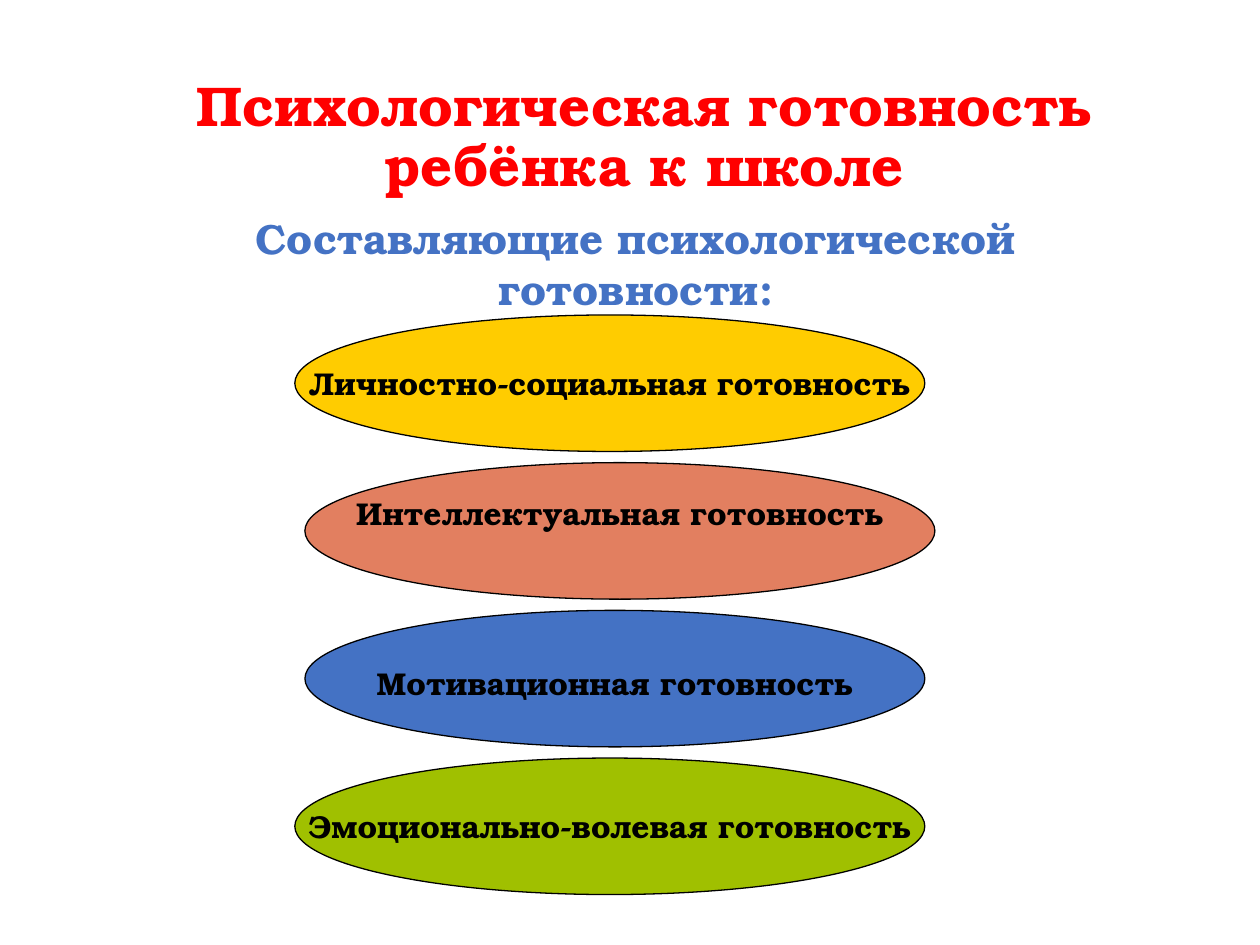
import pptx
import pptx.dml.color
import pptx.enum.shapes
import pptx.enum.text
import pptx.util

Pt = pptx.util.Pt
RGBColor = pptx.dml.color.RGBColor

FONT = "TeX Gyre Bonum"
RED = RGBColor(0xFF, 0x00, 0x00)
BLUE = RGBColor(0x44, 0x72, 0xC4)
BLACK = RGBColor(0x00, 0x00, 0x00)
YELLOW = RGBColor(0xFF, 0xCC, 0x00)
CORAL = RGBColor(0xE2, 0x7F, 0x60)
GREEN = RGBColor(0xA0, 0xC0, 0x00)


def write_text(shape, text, size, color, anchor=pptx.enum.text.MSO_ANCHOR.MIDDLE,
               wrap=True, line_spacing=None):
    """Put one bold centred paragraph into a shape."""
    frame = shape.text_frame
    frame.word_wrap = wrap
    frame.vertical_anchor = anchor
    para = frame.paragraphs[0]
    para.alignment = pptx.enum.text.PP_ALIGN.CENTER
    para.line_spacing = line_spacing
    span = para.add_run()
    span.text = text
    span.font.name = FONT
    span.font.size = Pt(size)
    span.font.bold = True
    span.font.color.rgb = color


deck = pptx.Presentation()
deck.slide_width = Pt(720)
deck.slide_height = Pt(540)
page = deck.slides.add_slide(deck.slide_layouts[6])

# Title
title = page.shapes.add_textbox(Pt(84.24), Pt(28.8), Pt(568), Pt(100.8))
write_text(title, "Психологическая готовность ребёнка к школе", size=32, color=RED,
           line_spacing=0.9)

# Ellipses: text, fill, left, width, extra top inset, extra bottom inset
components = [
    ("Личностно-социальная готовность", YELLOW, 168.5, 360, 0, 0),
    ("Интеллектуальная готовность", CORAL, 174.24, 360, 0, 21),
    ("Мотивационная готовность", BLUE, 174.24, 354.24, 4.6, 0),
    ("Эмоционально-волевая готовность", GREEN, 168.5, 360, 0, 0),
]
FIRST_TOP, PITCH, HEIGHT, INSET = 180, 84.4, 78, 3.6
for index, (text, fill, left, width, extra_top, extra_bottom) in enumerate(components):
    ellipse = page.shapes.add_shape(
        pptx.enum.shapes.MSO_SHAPE.OVAL,
        Pt(left), Pt(FIRST_TOP + index * PITCH), Pt(width), Pt(HEIGHT))
    ellipse.shadow.inherit = False
    ellipse.fill.solid()
    ellipse.fill.fore_color.rgb = fill
    ellipse.line.color.rgb = BLACK
    ellipse.line.width = Pt(0.75)
    ellipse.text_frame.margin_top = Pt(INSET + extra_top)
    ellipse.text_frame.margin_bottom = Pt(INSET + extra_bottom)
    write_text(ellipse, text, size=18, color=BLACK, wrap=False)

# Subtitle
subtitle = page.shapes.add_textbox(Pt(73.44), Pt(118), Pt(579.6), Pt(44.64))
write_text(subtitle, "Составляющие психологической готовности:", size=24, color=BLUE,
           anchor=pptx.enum.text.MSO_ANCHOR.TOP)

deck.save("out.pptx")
